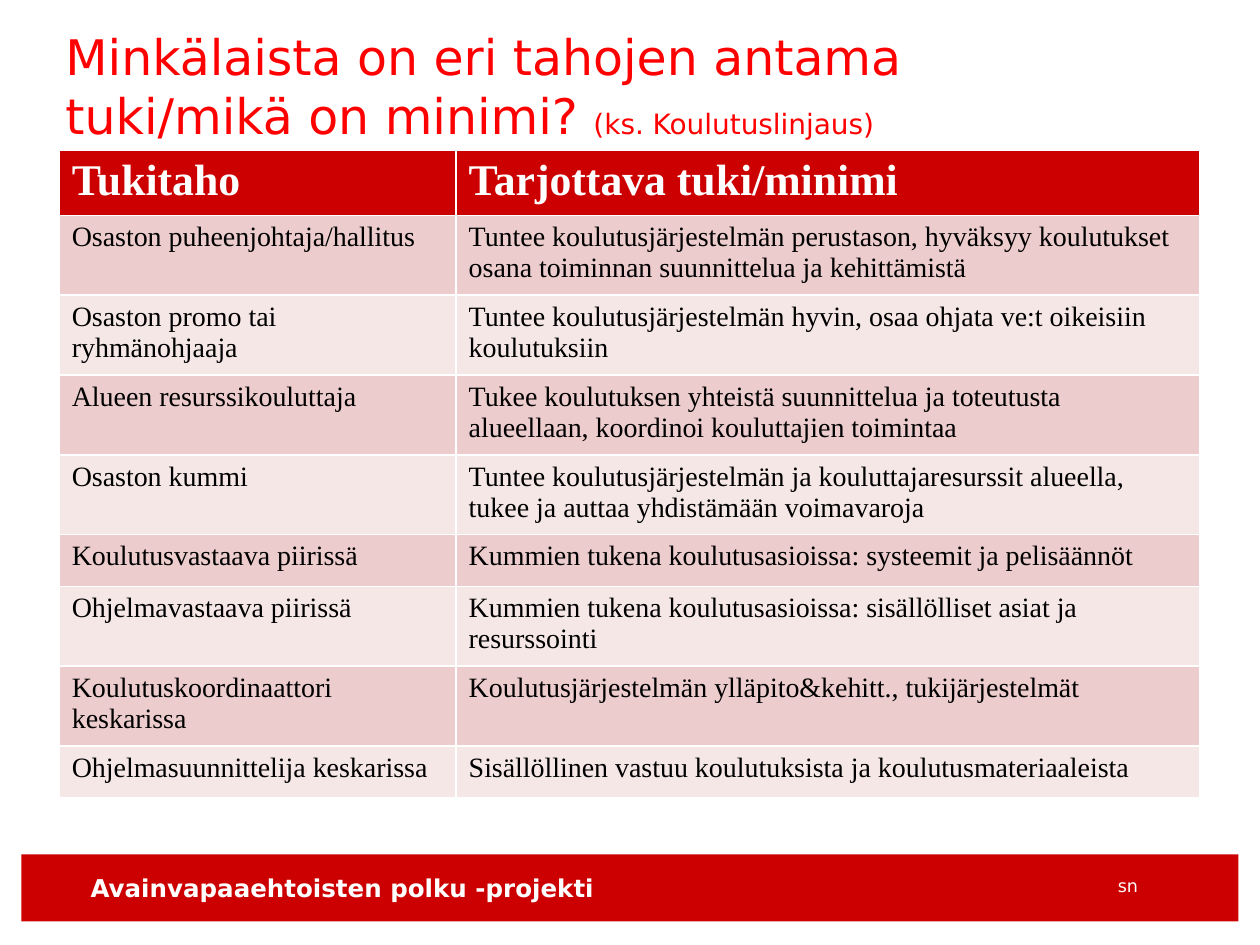
from dataclasses import dataclass

from pptx import Presentation
from pptx.dml.color import RGBColor
from pptx.enum.shapes import MSO_SHAPE
from pptx.enum.text import MSO_ANCHOR, MSO_AUTO_SIZE, PP_ALIGN
from pptx.util import Inches, Pt

SLIDE_WIDTH, SLIDE_HEIGHT = Inches(10), Inches(7.5)
COLORS = {
    "band": "CC0000",
    "title": "FF0000",
    "white": "FFFFFF",
    "black": "000000",
    "odd_row": "ECCCCC",
    "even_row": "F6E7E7",
}
SANS, SERIF = "DejaVu Sans", "Times New Roman"
COLUMN_WIDTHS = (3.15, 5.9)
HEADER_HEIGHT, ONE_LINE, TWO_LINES = 0.47, 0.41, 0.59


@dataclass
class Box:
    """An area given in shares of the slide's width and height."""
    left: float
    top: float
    width: float
    height: float

    def lengths(self) -> tuple[int, int, int, int]:
        return (int(self.left * SLIDE_WIDTH), int(self.top * SLIDE_HEIGHT),
                int(self.width * SLIDE_WIDTH), int(self.height * SLIDE_HEIGHT))


@dataclass
class Style:
    size: float
    color: str
    font: str = SANS
    bold: bool = False


@dataclass
class SupportRow:
    supporter: str
    support: str
    height: float = TWO_LINES


HEADER = SupportRow("Tukitaho", "Tarjottava tuki/minimi", HEADER_HEIGHT)
SUPPORT_ROWS = [
    SupportRow("Osaston puheenjohtaja/hallitus",
               "Tuntee koulutusjärjestelmän perustason, hyväksyy koulutukset "
               "osana toiminnan suunnittelua ja kehittämistä"),
    SupportRow("Osaston promo tai ryhmänohjaaja",
               "Tuntee koulutusjärjestelmän hyvin, osaa ohjata ve:t oikeisiin koulutuksiin"),
    SupportRow("Alueen resurssikouluttaja",
               "Tukee koulutuksen yhteistä suunnittelua ja toteutusta alueellaan, "
               "koordinoi kouluttajien toimintaa"),
    SupportRow("Osaston kummi",
               "Tuntee koulutusjärjestelmän ja kouluttajaresurssit alueella, "
               "tukee ja auttaa yhdistämään voimavaroja"),
    SupportRow("Koulutusvastaava piirissä",
               "Kummien tukena koulutusasioissa: systeemit ja pelisäännöt", ONE_LINE),
    SupportRow("Ohjelmavastaava piirissä",
               "Kummien tukena koulutusasioissa: sisällölliset asiat ja resurssointi"),
    SupportRow("Koulutuskoordinaattori keskarissa",
               "Koulutusjärjestelmän ylläpito&kehitt., tukijärjestelmät"),
    SupportRow("Ohjelmasuunnittelija keskarissa",
               "Sisällöllinen vastuu koulutuksista ja koulutusmateriaaleista", ONE_LINE),
]


def rgb(name: str) -> RGBColor:
    return RGBColor.from_string(COLORS[name])


def format_run(run, style: Style) -> None:
    run.font.size = Pt(style.size)
    run.font.name = style.font
    run.font.bold = style.bold
    run.font.color.rgb = rgb(style.color)


def add_footer_band(slide, box: Box) -> None:
    band = slide.shapes.add_shape(MSO_SHAPE.RECTANGLE, *box.lengths())
    band.shadow.inherit = False
    band.fill.solid()
    band.fill.fore_color.rgb = rgb("band")
    band.line.fill.background()


def add_footer_text(slide, box: Box, text: str, style: Style, alignment: PP_ALIGN) -> None:
    text_frame = slide.shapes.add_textbox(*box.lengths()).text_frame
    text_frame.word_wrap = False
    text_frame.auto_size = MSO_AUTO_SIZE.SHAPE_TO_FIT_TEXT
    text_frame.text = text
    paragraph = text_frame.paragraphs[0]
    paragraph.alignment = alignment
    format_run(paragraph.runs[0], style)


def add_title(slide, box: Box, title: str, reference: str) -> None:
    text_frame = slide.shapes.add_textbox(*box.lengths()).text_frame
    text_frame.word_wrap = True
    text_frame.vertical_anchor = MSO_ANCHOR.TOP
    text_frame.margin_left = text_frame.margin_right = 0
    text_frame.margin_top = text_frame.margin_bottom = 0
    paragraph = text_frame.paragraphs[0]
    for text, size in ((title, 28), (reference, 16)):
        run = paragraph.add_run()
        run.text = text
        format_run(run, Style(size, "title"))


def fill_row(table, index: int, row: SupportRow, style: Style, fill: str) -> None:
    table.rows[index].height = Inches(row.height)
    for cell, text in zip(table.rows[index].cells, (row.supporter, row.support)):
        cell.fill.solid()
        cell.fill.fore_color.rgb = rgb(fill)
        cell.text_frame.text = text
        format_run(cell.text_frame.paragraphs[0].runs[0], style)


def add_support_table(slide, left: float, top: float) -> None:
    """Add the table; its default style draws the white lines between cells."""
    rows = [HEADER, *SUPPORT_ROWS]
    height = sum(row.height for row in rows)
    table = slide.shapes.add_table(
        len(rows), len(COLUMN_WIDTHS), int(left * SLIDE_WIDTH), int(top * SLIDE_HEIGHT),
        Inches(sum(COLUMN_WIDTHS)), Inches(height)).table
    for column, width in zip(table.columns, COLUMN_WIDTHS):
        column.width = Inches(width)
    fill_row(table, 0, HEADER, Style(25, "white", SERIF, True), "band")
    for index, row in enumerate(SUPPORT_ROWS, start=1):
        fill = "odd_row" if index % 2 else "even_row"
        fill_row(table, index, row, Style(16, "black", SERIF), fill)


def main() -> None:
    presentation = Presentation()
    presentation.slide_width, presentation.slide_height = SLIDE_WIDTH, SLIDE_HEIGHT
    slide = presentation.slides.add_slide(presentation.slide_layouts[6])
    add_footer_band(slide, Box(0.017, 0.904, 0.966, 0.071))
    add_footer_text(slide, Box(0.062, 0.917, 0.422, 0.045),
                    "Avainvapaaehtoisten polku -projekti",
                    Style(14, "white", bold=True), PP_ALIGN.LEFT)
    add_footer_text(slide, Box(0.873, 0.919, 0.04, 0.035), "sn",
                    Style(10, "white"), PP_ALIGN.RIGHT)
    add_title(slide, Box(0.052, 0.028, 0.72, 0.181),
              "Minkälaista on eri tahojen antama tuki/mikä on minimi? ",
              "(ks. Koulutuslinjaus)")
    add_support_table(slide, 0.047, 0.159)
    presentation.save("out.pptx")


if __name__ == "__main__":
    main()
